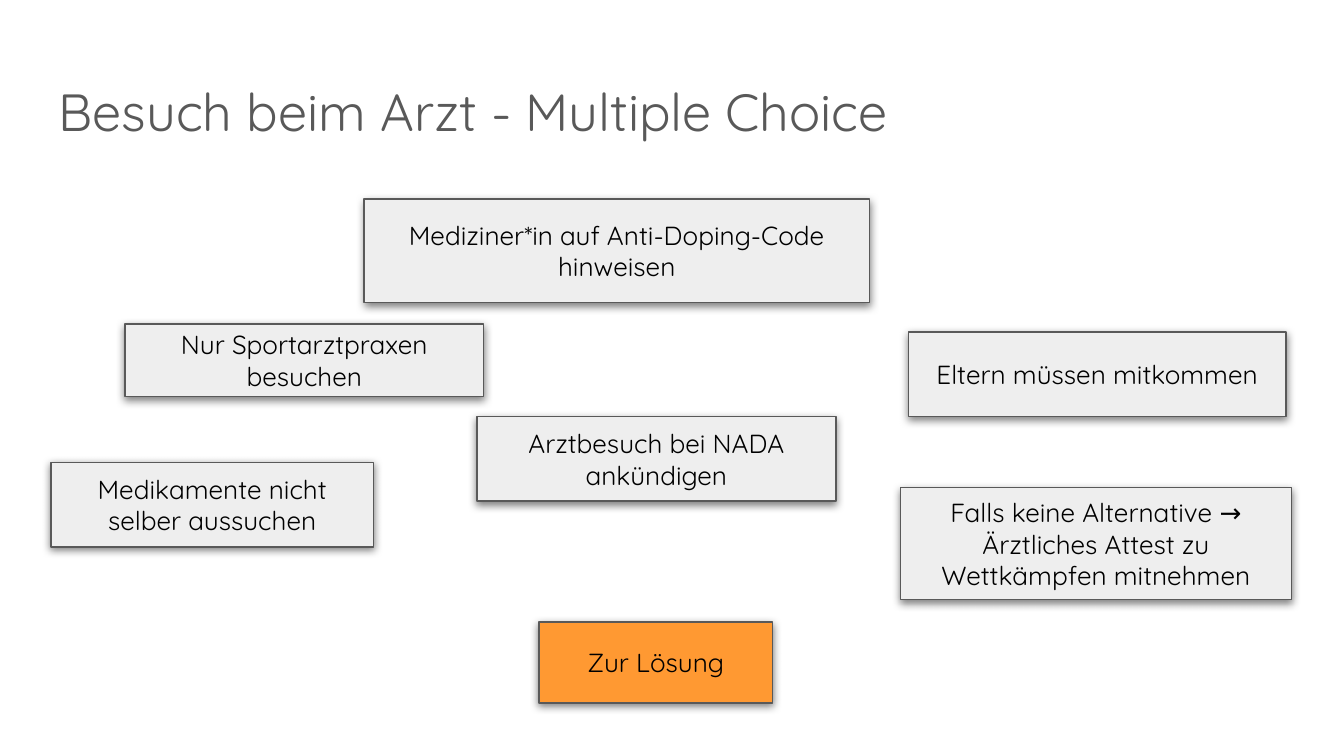
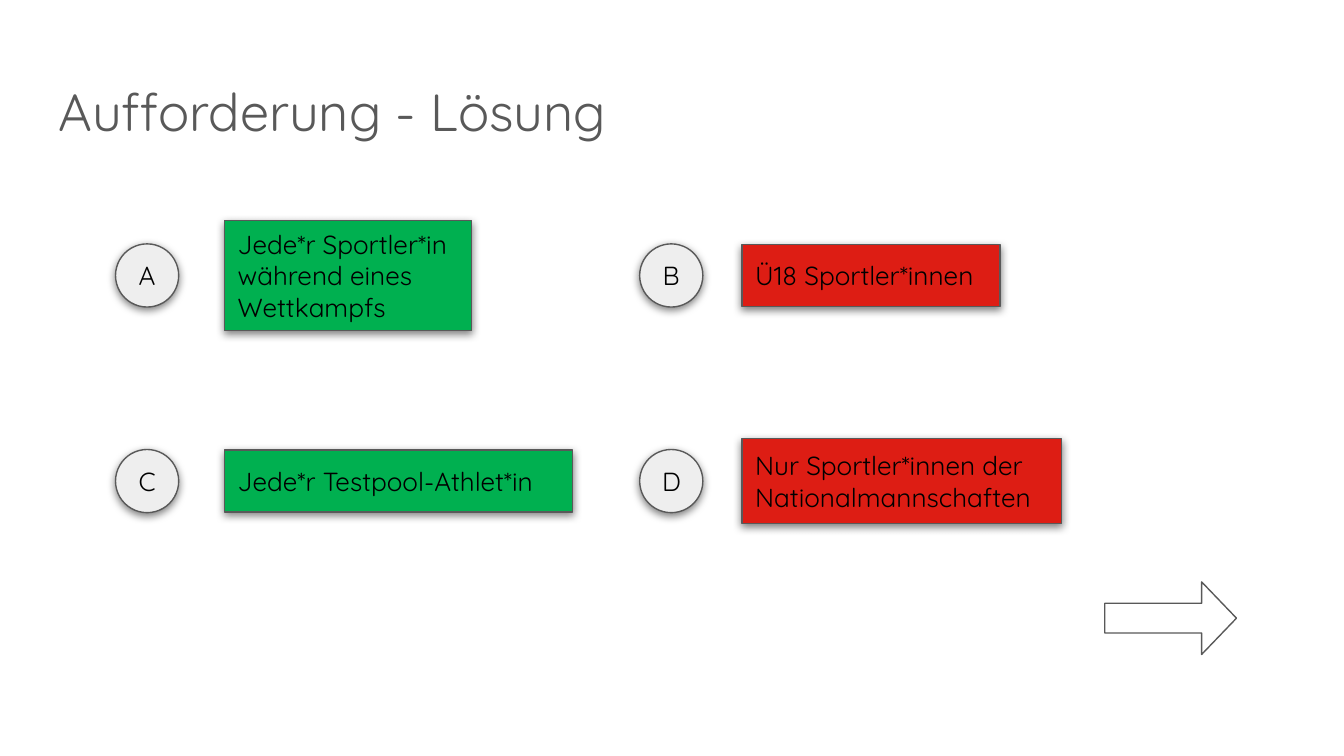
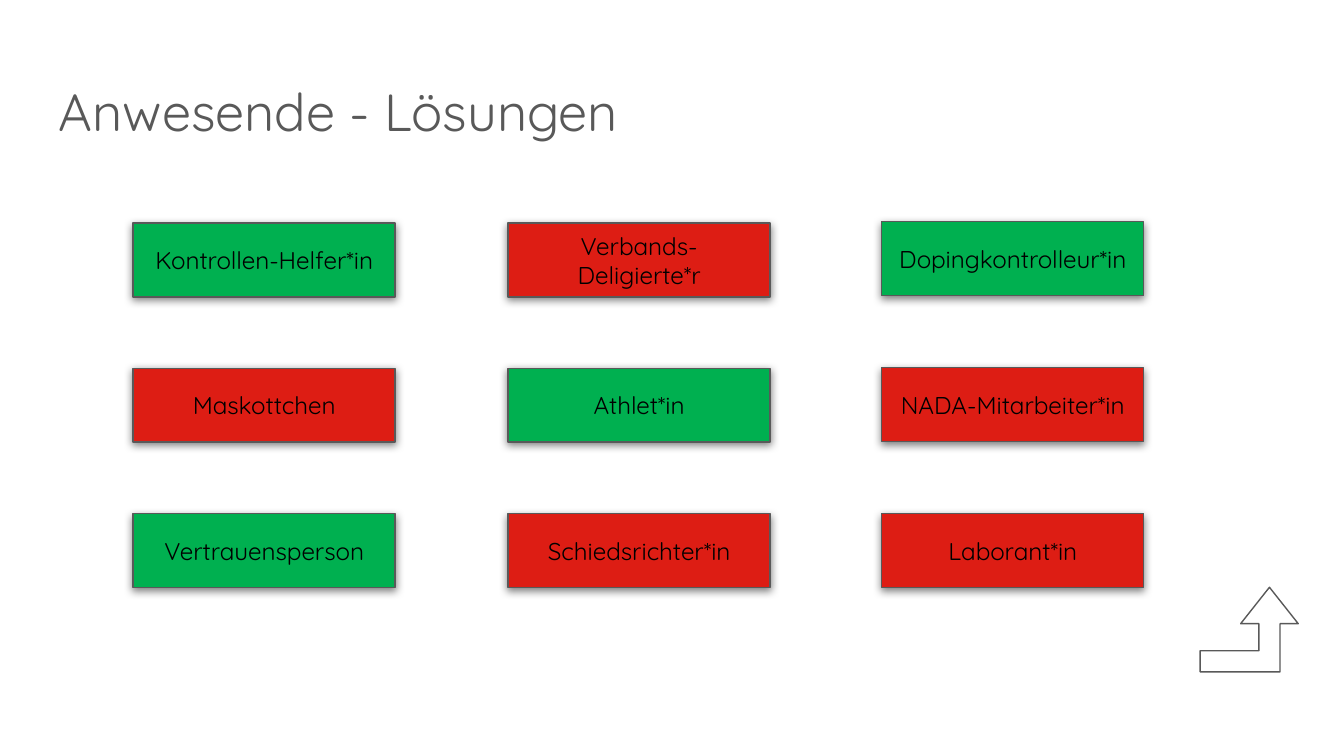
from lxml import etree
from pptx import Presentation
from pptx.dml.color import RGBColor
from pptx.enum.shapes import MSO_SHAPE
from pptx.enum.text import MSO_ANCHOR, PP_ALIGN
from pptx.oxml.ns import qn
from pptx.util import Inches, Pt

RECTANGLE = MSO_SHAPE.RECTANGLE
ROUNDED = MSO_SHAPE.ROUNDED_RECTANGLE
CIRCLE = MSO_SHAPE.OVAL
RIGHT_ARROW = MSO_SHAPE.RIGHT_ARROW
BENT_ARROW = MSO_SHAPE.BENT_UP_ARROW
LEFT = PP_ALIGN.LEFT
CENTER = PP_ALIGN.CENTER
TOP = MSO_ANCHOR.TOP
MIDDLE = MSO_ANCHOR.MIDDLE

FONT = "Quicksand"
BLACK = "000000"
GRAY = "595959"
LIGHT = "EEEEEE"
ORANGE = "FF9932"
GREEN = "00B050"
RED = "DD1D14"


def write_text(shape, text, size, color, align, anchor):
    frame = shape.text_frame
    frame.word_wrap = True
    frame.vertical_anchor = anchor
    frame.margin_left = frame.margin_right = Inches(0.1)
    frame.margin_top = frame.margin_bottom = Inches(0.1)
    paragraph = frame.paragraphs[0]
    paragraph.alignment = align
    run = paragraph.add_run()
    run.text = text
    run.font.name = FONT
    run.font.size = Pt(size)
    run.font.color.rgb = RGBColor.from_string(color)


def add_outlined(slide, kind, box, fill=None, text="", size=14, align=CENTER, adjustments=()):
    shape = slide.shapes.add_shape(kind, *[Inches(length) for length in box])
    for index, value in enumerate(adjustments):
        shape.adjustments[index] = value
    shape.line.color.rgb = RGBColor.from_string(GRAY)
    shape.line.width = Pt(0.75)
    shape.shadow.inherit = False
    if fill is None:
        shape.fill.background()
        return
    shape.fill.solid()
    shape.fill.fore_color.rgb = RGBColor.from_string(fill)
    effects = shape._element.spPr.find(qn("a:effectLst"))
    shadow = etree.SubElement(effects, qn("a:outerShdw"), blurRad=str(Pt(4.5)),
                              dist=str(Pt(1.5)), dir="5400000", algn="bl", rotWithShape="0")
    shadow_color = etree.SubElement(shadow, qn("a:srgbClr"), val=BLACK)
    etree.SubElement(shadow_color, qn("a:alpha"), val="50000")
    write_text(shape, text, size, BLACK, align, MIDDLE)


presentation = Presentation()
presentation.slide_width = Inches(10)
presentation.slide_height = Inches(10 * 9 / 16)

slides = []
for title in ("Besuch beim Arzt - Multiple Choice", "Aufforderung - Lösung", "Anwesende - Lösungen"):
    slide = presentation.slides.add_slide(presentation.slide_layouts[6])
    title_box = slide.shapes.add_textbox(Inches(0.34), Inches(0.49), Inches(8.3), Inches(0.63))
    write_text(title_box, title, 28, GRAY, LEFT, TOP)
    slides.append(slide)
choice_slide, request_slide, attendee_slide = slides

choices = [
    ("Medikamente nicht selber aussuchen", (0.38, 3.44, 2.4, 0.63)),
    ("Mediziner*in auf Anti-Doping-Code hinweisen", (2.71, 1.48, 3.76, 0.77)),
    ("Arztbesuch bei NADA ankündigen", (3.55, 3.1, 2.67, 0.63)),
    ("Eltern müssen mitkommen", (6.76, 2.47, 2.81, 0.63)),
    ("Nur Sportarztpraxen besuchen", (0.93, 2.41, 2.67, 0.54)),
    ("Falls keine Alternative → Ärztliches Attest zu Wettkämpfen mitnehmen", (6.7, 3.63, 2.91, 0.83)),
]
for text, box in choices:
    add_outlined(choice_slide, RECTANGLE, box, LIGHT, text)
add_outlined(choice_slide, ROUNDED, (4.01, 4.63, 1.74, 0.6), ORANGE, "Zur Lösung", adjustments=(0,))

circle_size = 0.47
answers = [
    ("A", 0.86, 2.05, 1.67, 1.84, 0.82, GREEN, "Jede*r Sportler*in während eines Wettkampfs"),
    ("B", 4.76, 2.05, 5.52, 1.92, 0.46, RED, "Ü18 Sportler*innen"),
    ("C", 0.86, 3.58, 1.67, 2.59, 0.46, GREEN, "Jede*r Testpool-Athlet*in"),
    ("D", 4.76, 3.58, 5.52, 2.38, 0.63, RED, "Nur Sportler*innen der Nationalmannschaften"),
]
for letter, circle_left, middle, left, width, height, color, text in answers:
    circle = (circle_left, middle - circle_size / 2, circle_size, circle_size)
    add_outlined(request_slide, CIRCLE, circle, LIGHT, letter)
    add_outlined(request_slide, RECTANGLE, (left, middle - height / 2, width, height), color, text, align=LEFT)
add_outlined(request_slide, RIGHT_ARROW, (8.22, 4.33, 0.98, 0.54), adjustments=(0.41, 0.48))

last_row_top = 3.82
attendee_columns = [
    (0.99, 1.66, [("Kontrollen-Helfer*in", GREEN), ("Maskottchen", RED), ("Vertrauensperson", GREEN)]),
    (3.78, 1.66, [("Verbands-Deligierte*r", RED), ("Athlet*in", GREEN), ("Schiedsrichter*in", RED)]),
    (6.56, 1.65, [("Dopingkontrolleur*in", GREEN), ("NADA-Mitarbeiter*in", RED), ("Laborant*in", RED)]),
]
for left, first_row_top, attendees in attendee_columns:
    row_step = (last_row_top - first_row_top) / 2
    for row, (text, color) in enumerate(attendees):
        box = (left, first_row_top + row * row_step, 1.95, 0.55)
        add_outlined(attendee_slide, RECTANGLE, box, color, text, size=13)
add_outlined(attendee_slide, BENT_ARROW, (8.93, 4.37, 0.73, 0.63), adjustments=(0.25, 0.34, 0.43))

presentation.save("out.pptx")
